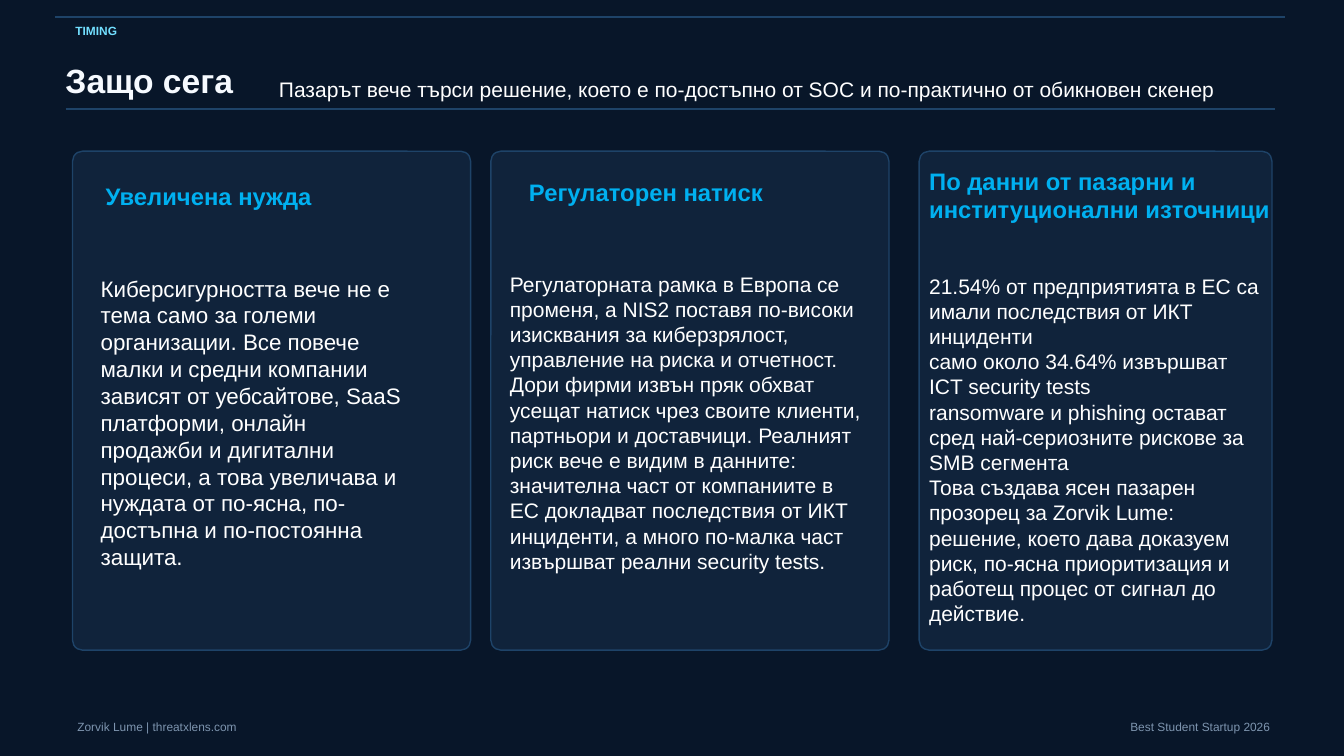
from dataclasses import dataclass

from lxml import etree
from pptx import Presentation
from pptx.dml.color import RGBColor
from pptx.enum.shapes import MSO_CONNECTOR as Connector, MSO_SHAPE as Preset
from pptx.enum.text import MSO_ANCHOR as Anchor, MSO_AUTO_SIZE as AutoSize, PP_ALIGN as Align
from pptx.oxml.ns import qn
from pptx.util import Pt


@dataclass(frozen=True)
class Theme:
    font: str = "Arial"
    background: str = "081629"
    panel: str = "10233B"
    rule: str = "1E4368"
    tag: str = "72DFFF"
    title: str = "F6FAFF"
    heading: str = "00B0F0"
    body: str = "FFFFFF"
    footer: str = "7E95AF"
    small_size: float = 8.5
    title_size: float = 24
    heading_size: float = 17
    lead_size: float = 16
    body_size: float = 15


THEME = Theme()

PANEL_TOP, PANEL_HEIGHT, PANEL_RADIUS = 108, 356.4, 7.2

PANELS = [
    {
        "left": 51.8, "width": 284.4,
        "heading": "Увеличена нужда",
        "heading_box": (68.4, 131, 187.2, 18),
        "body": ["Киберсигурността вече не е тема само за големи организации. "
                 "Все повече малки и средни компании зависят от уебсайтове, SaaS платформи, "
                 "онлайн продажби и дигитални процеси, а това увеличава и нуждата от по-ясна, "
                 "по-достъпна и по-постоянна защита."],
        "body_box": (64.8, 171.4, 230.4, 260.6),
        "body_style": {"size": THEME.lead_size},
    },
    {
        "left": 350.6, "width": 284.4,
        "heading": "Регулаторен натиск",
        "heading_box": (370.8, 128.2, 187.2, 18),
        "body": ["Регулаторната рамка в Европа се променя, а NIS2 поставя по-високи изисквания "
                 "за киберзрялост, управление на риска и отчетност. Дори фирми извън пряк обхват "
                 "усещат натиск чрез своите клиенти, партньори и доставчици. Реалният риск вече "
                 "е видим в данните: значителна част от компаниите в ЕС докладват последствия от "
                 "ИКТ инциденти, а много по-малка част извършват реални security tests."],
        "body_box": (357.1, 152.6, 266.4, 298.1),
        "body_style": {"size": THEME.body_size},
    },
    {
        "left": 656.6, "width": 252,
        "heading": "По данни от пазарни и институционални източници",
        "heading_box": (656.6, 118.1, 267.8, 42.5),
        "body": ["21.54% от предприятията в ЕС са имали последствия от ИКТ инциденти",
                 "само около 34.64% извършват ICT security tests",
                 "ransomware и phishing остават сред най-сериозните рискове за SMB сегмента",
                 "Това създава ясен пазарен прозорец за Zorvik Lume: решение, което дава доказуем "
                 "риск, по-ясна приоритизация и работещ процес от сигнал до действие."],
        "body_box": (656.6, 191.5, 252, 280.1),
        "body_style": {"size": THEME.body_size, "anchor": Anchor.TOP, "grow": True},
    },
]


def color(value):
    return RGBColor.from_string(value)


def add_text(slide, box, paragraphs, size, ink, bold=False, align=Align.LEFT,
             anchor=Anchor.MIDDLE, wrap=True, grow=False, inset=True):
    frame = slide.shapes.add_textbox(*map(Pt, box)).text_frame
    frame.word_wrap = wrap
    frame.vertical_anchor = anchor
    frame.auto_size = AutoSize.SHAPE_TO_FIT_TEXT if grow else AutoSize.NONE
    if not inset:
        frame.margin_left = frame.margin_right = frame.margin_top = frame.margin_bottom = 0
    frame.text = "\n".join(paragraphs)
    for paragraph in frame.paragraphs:
        paragraph.alignment = align
        for run in paragraph.runs:
            run.font.name = THEME.font
            run.font.size = Pt(size)
            run.font.bold = bold
            run.font.color.rgb = color(ink)


def add_rule(slide, left, right, y):
    rule = slide.shapes.add_connector(Connector.STRAIGHT, Pt(left), Pt(y), Pt(right), Pt(y))
    rule.line.color.rgb = color(THEME.rule)
    rule.line.width = Pt(1)
    etree.SubElement(rule._element.spPr, qn("a:effectLst"))


def add_panel(slide, left, width, heading, heading_box, body, body_box, body_style):
    panel = slide.shapes.add_shape(Preset.ROUNDED_RECTANGLE, Pt(left), Pt(PANEL_TOP),
                                   Pt(width), Pt(PANEL_HEIGHT))
    panel.adjustments[0] = PANEL_RADIUS / min(width, PANEL_HEIGHT)
    panel.shadow.inherit = False
    panel.fill.solid()
    panel.fill.fore_color.rgb = color(THEME.panel)
    panel.line.color.rgb = color(THEME.rule)
    panel.line.width = Pt(1)
    add_text(slide, heading_box, [heading], THEME.heading_size, THEME.heading, bold=True)
    add_text(slide, body_box, body, ink=THEME.body, **body_style)


def add_header(slide):
    add_rule(slide, 39.6, 918, 12.2)
    add_text(slide, (46.8, 17.3, 252, 10), ["TIMING"], THEME.small_size, THEME.tag, bold=True)
    add_text(slide, (46.8, 41.8, 124.6, 30.2), ["Защо сега"], THEME.title_size, THEME.title,
             bold=True, inset=False)
    add_text(slide, (192.2, 51.1, 690.5, 25.2),
             ["Пазарът вече търси решение, което е по-достъпно от SOC "
              "и по-практично от обикновен скенер"],
             THEME.body_size, THEME.body, anchor=Anchor.TOP, wrap=False, grow=True)
    add_rule(slide, 46.8, 910.8, 77.8)


def add_footer(slide):
    add_text(slide, (48.2, 512.6, 468, 13), ["Zorvik Lume | threatxlens.com"],
             THEME.small_size, THEME.footer)
    add_text(slide, (727.2, 512.6, 187.2, 13), ["Best Student Startup 2026"],
             THEME.small_size, THEME.footer, align=Align.RIGHT)


def main():
    deck = Presentation()
    deck.slide_width, deck.slide_height = Pt(960), Pt(540)
    slide = deck.slides.add_slide(deck.slide_layouts[6])
    slide.background.fill.solid()
    slide.background.fill.fore_color.rgb = color(THEME.background)
    add_header(slide)
    for panel in PANELS:
        add_panel(slide, **panel)
    add_footer(slide)
    deck.save("out.pptx")


if __name__ == "__main__":
    main()
